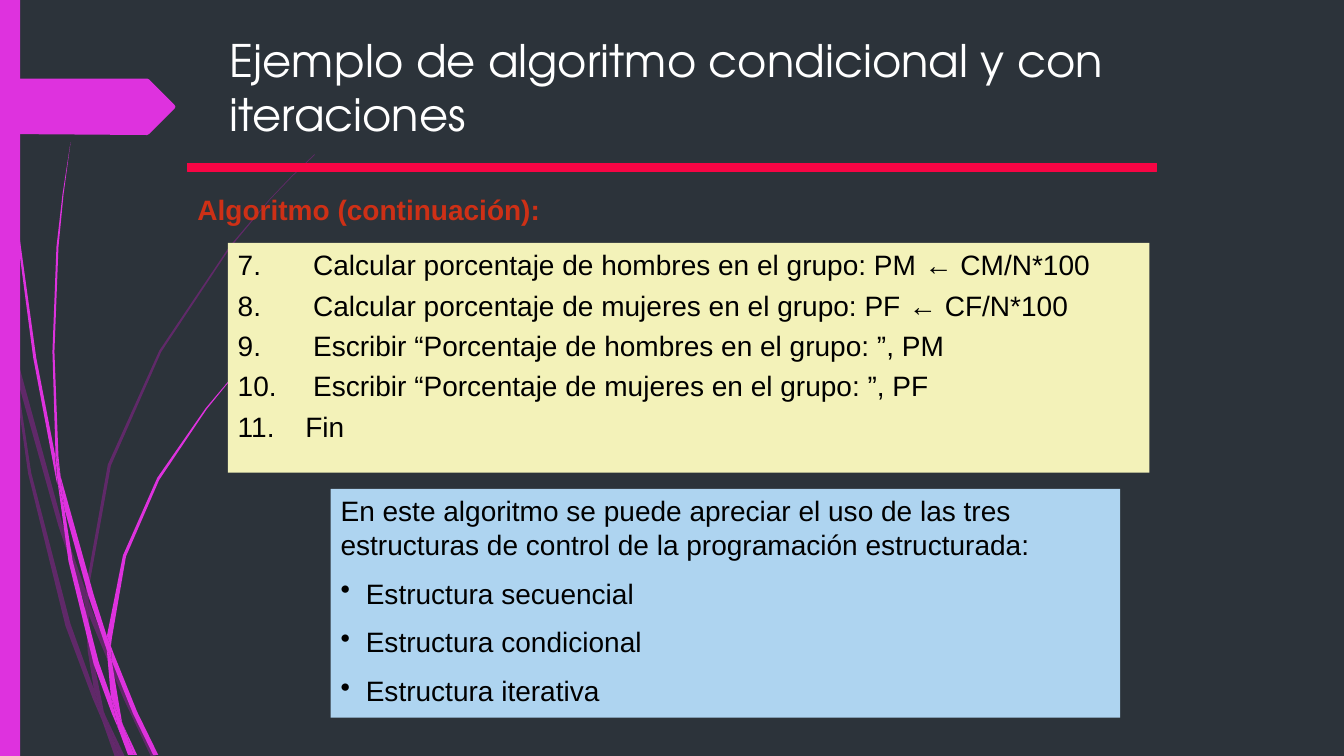
from dataclasses import dataclass

from lxml.etree import SubElement
from pptx import Presentation
from pptx.dml.color import RGBColor as RGB
from pptx.enum.shapes import MSO_SHAPE as SHAPE
from pptx.enum.text import MSO_ANCHOR as ANCHOR
from pptx.oxml.ns import qn
from pptx.util import Inches, Pt


@dataclass(frozen=True)
class Theme:
    background: str = "2C333A"
    accent: str = "DE32DE"
    dark_accent: str = "B01CB0"
    rule: str = "F70544"
    heading: str = "CE3016"
    steps_fill: str = "F3F2B9"
    remark_fill: str = "AED4F0"
    ink: str = "000000"
    white: str = "FFFFFF"
    title_font: str = "TeX Gyre Adventor"
    body_font: str = "Arial"
    title_size: int = 32
    body_size: int = 20
    tight: float = 4.8
    loose: float = 10.8


# Outlines in hundredths of an inch
FAINT_STRANDS = [
    [(11, 350), (9, 322), (0, 282), (0, 299), (10, 344)],
    [(58, 522), (84, 599), (85, 586), (62, 520), (14, 345), (17, 376)],
    [(92, 607), (88, 596), (88, 610), (123, 694), (150, 751), (155, 751),
     (127, 692)],
    [(119, 751), (124, 751), (105, 711)],
    [(93, 683), (70, 619), (31, 469), (17, 376), (11, 350), (28, 470),
     (65, 621), (92, 693), (101, 714), (99, 707)],
    [(84, 599), (87, 646), (93, 683), (96, 692), (105, 711), (103, 706),
     (91, 646), (88, 610), (88, 608)],
    [(88, 584), (110, 462), (160, 349), (229, 245), (268, 198), (290, 175),
     (312, 154), (312, 153), (289, 175), (268, 197), (228, 244), (158, 348),
     (107, 461), (85, 584), (85, 586), (88, 596)],
    [(101, 714), (114, 751), (119, 751)],
    [(88, 608), (88, 610), (88, 596), (85, 586), (84, 599)],
    [(96, 692), (93, 683), (99, 707), (101, 714), (119, 751), (105, 711)],
]
BRIGHT_STRANDS = [
    [(7, 110), (17, 233), (33, 355), (56, 477), (57, 481), (55, 457),
     (55, 453), (36, 355), (19, 232), (8, 109), (5, 48), (4, 0), (3, 0),
     (4, 48)],
    [(88, 592), (106, 645), (106, 633), (106, 631), (93, 590), (60, 472),
     (64, 505)],
    [(113, 649), (110, 641), (111, 656), (132, 708), (152, 749), (157, 749),
     (136, 706)],
    [(110, 691), (98, 657), (72, 556), (64, 505), (57, 477), (68, 557),
     (93, 659), (111, 708), (117, 722), (116, 717)],
    [(60, 472), (58, 453), (54, 349), (58, 245), (63, 193), (70, 141),
     (62, 193), (56, 245), (52, 349), (55, 449)],
    [(133, 749), (136, 749), (122, 719)],
    [(57, 477), (64, 505), (60, 472), (55, 449), (55, 453)],
    [(111, 633), (125, 552), (158, 476), (205, 406), (231, 374), (245, 359),
     (261, 344), (260, 344), (245, 358), (231, 373), (204, 405), (156, 474),
     (122, 551), (106, 631), (110, 641)],
    [(117, 722), (127, 749), (131, 749)],
    [(106, 645), (110, 691), (116, 706), (122, 719), (121, 716), (111, 656),
     (109, 651)],
    [(106, 645), (109, 651), (111, 656), (110, 641), (106, 631), (106, 633)],
    [(116, 706), (110, 691), (116, 717), (117, 722), (130, 749), (133, 749),
     (122, 719)],
]
TAG = [(173, 108), (148, 133), (146, 134), (0, 133), (0, 78), (146, 78),
       (148, 79), (173, 104), (174, 106)]

# Each step is a list of runs; the arrow is bold
STEPS = [
    [" Calcular porcentaje de hombres en el grupo: PM ", "←", " CM/N*100"],
    [" Calcular porcentaje de mujeres en el grupo: PF ", "←", " CF/N*100"],
    [" Escribir “Porcentaje de hombres en el grupo: ”, PM"],
    [" Escribir “Porcentaje de mujeres en el grupo: ”, PF"],
    ["Fin"],
]
REMARK = ("En este algoritmo se puede apreciar el uso de las tres estructuras "
          "de control de la programación estructurada:")
STRUCTURES = ["Estructura secuencial", "Estructura condicional",
              "Estructura iterativa"]


def write(paragraph, *texts, font, size, color, bold=False, before=0):
    paragraph.space_before = Pt(before)
    for text in texts:
        run = paragraph.add_run()
        run.text = text
        run.font.name, run.font.size = font, Pt(size)
        run.font.color.rgb = RGB.from_string(color)
        run.font.bold = bold or text == "←"


def mark(paragraph, indent, tag, **attributes):
    """Give the paragraph a hanging bullet or number."""
    properties = paragraph._p.get_or_add_pPr()
    properties.set("marL", str(Inches(indent)))
    properties.set("indent", str(-Inches(indent)))
    SubElement(properties, qn(tag), attributes)


class SlideBuilder:
    def __init__(self, slide, theme):
        self.slide, self.theme = slide, theme
        slide.background.fill.solid()
        slide.background.fill.fore_color.rgb = RGB.from_string(theme.background)

    def paint(self, shape, color, opacity=None):
        shape.shadow.inherit = False
        shape.fill.solid()
        shape.fill.fore_color.rgb = RGB.from_string(color)
        shape.line.fill.background()
        if opacity:
            srgb = shape.fill._xPr.find(".//" + qn("a:srgbClr"))
            SubElement(srgb, qn("a:alpha"), val=str(opacity * 1000))

    def outline(self, points, color, opacity=None, parent=None):
        builder = (parent or self.slide).shapes.build_freeform(
            *points[0], scale=Inches(0.01))
        builder.add_line_segments(points[1:], close=True)
        self.paint(builder.convert_to_shape(), color, opacity)

    def strands(self, outlines, color, opacity=None):
        group = self.slide.shapes.add_group_shape()
        for points in outlines:
            self.outline(points, color, opacity, group)

    def bar(self, box, color):
        shape = self.slide.shapes.add_shape(SHAPE.RECTANGLE, *map(Inches, box))
        self.paint(shape, color)
        return shape

    def text(self, box, fill=None):
        shape = self.slide.shapes.add_textbox(*map(Inches, box))
        if fill:
            self.paint(shape, fill)
        shape.text_frame.word_wrap = True
        shape.text_frame.vertical_anchor = ANCHOR.TOP
        return shape.text_frame


def main():
    deck = Presentation()
    deck.slide_width, deck.slide_height = Inches(13.33), Inches(7.5)
    theme = Theme()
    page = SlideBuilder(deck.slides.add_slide(deck.slide_layouts[6]), theme)
    body = dict(font=theme.body_font, size=theme.body_size, color=theme.ink)

    # Decoration on the left
    page.strands(FAINT_STRANDS, theme.dark_accent, opacity=40)
    page.strands(BRIGHT_STRANDS, theme.accent)
    page.bar((0, 0, 0.2, 7.5), theme.accent)
    page.outline(TAG, theme.accent)

    # Rule and heading
    rule = page.bar((1.86, 1.62, 9.61, 0.08), theme.rule)
    rule.line.color.rgb = RGB.from_string(theme.rule)
    rule.line.width = Pt(0.75)
    heading = page.text((1.86, 1.86, 9.61, 0.43))
    write(heading.paragraphs[0], "Algoritmo (continuación):",
          **body | dict(color=theme.heading, bold=True))

    # Numbered steps
    steps = page.text((2.26, 2.41, 9.14, 2.28), theme.steps_fill)
    for index, runs in enumerate(STEPS):
        step = steps.add_paragraph() if index else steps.paragraphs[0]
        write(step, *runs, before=theme.tight if index else 0, **body)
        mark(step, 0.67, "a:buAutoNum", type="arabicPeriod", startAt="7")

    # Remark on the control structures
    remark = page.text((3.28, 4.85, 7.83, 2.27), theme.remark_fill)
    write(remark.paragraphs[0], REMARK, **body)
    for name in STRUCTURES:
        structure = remark.add_paragraph()
        write(structure, name, before=theme.loose, **body)
        mark(structure, 0.25, "a:buChar", char="•")

    # Title
    title = page.text((2.18, 0.28, 11.15, 1.18))
    write(title.paragraphs[0],
          "Ejemplo de algoritmo condicional y con iteraciones",
          font=theme.title_font, size=theme.title_size, color=theme.white)

    deck.save("out.pptx")


if __name__ == "__main__":
    main()
